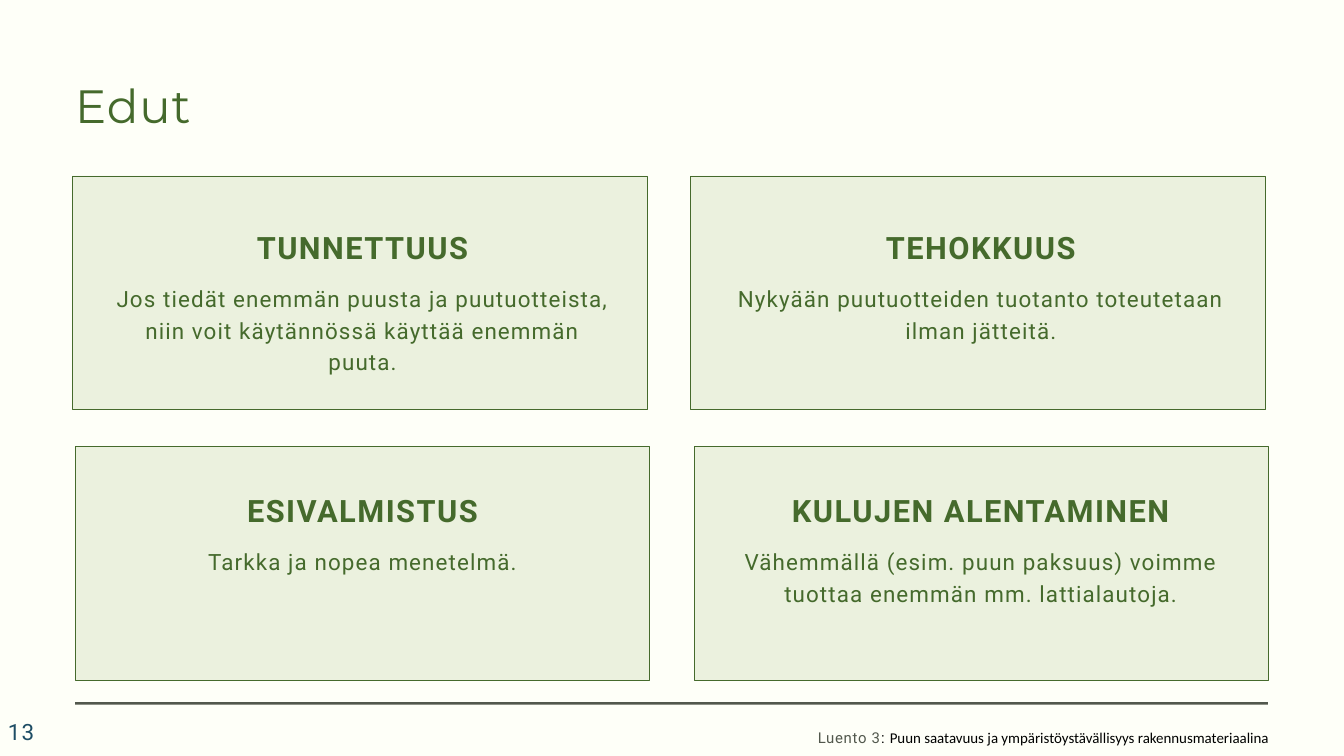
from dataclasses import dataclass

from pptx import Presentation
from pptx.dml.color import RGBColor
from pptx.enum.shapes import MSO_SHAPE
from pptx.enum.text import MSO_ANCHOR, MSO_AUTO_SIZE, PP_ALIGN
from pptx.util import Cm, Pt

RECTANGLE = MSO_SHAPE.RECTANGLE
TOP, MIDDLE = MSO_ANCHOR.TOP, MSO_ANCHOR.MIDDLE
LEFT, CENTER = PP_ALIGN.LEFT, PP_ALIGN.CENTER
NO_AUTOFIT = MSO_AUTO_SIZE.NONE

IVORY = RGBColor(0xFE, 0xFF, 0xF8)
PALE_GREEN = RGBColor(0xEB, 0xF1, 0xDE)
GREEN = RGBColor(0x45, 0x6A, 0x2C)
GREY = RGBColor(0x52, 0x58, 0x4D)
BLUE = RGBColor(0x1E, 0x4D, 0x65)
BLACK = RGBColor(0, 0, 0)

CARD_WIDTH, CARD_HEIGHT = 21.72, 8.84
CARD_TEXT_WIDTH = 18.77
BODY_OFFSET = 2.03  # from the top of the heading to the top of the body


@dataclass
class Style:
    font: str
    size: float
    color: RGBColor
    spacing: float = 0  # between letters, in points
    bold: bool = False


@dataclass
class Card:
    left: float
    top: float
    text_left: float
    text_top: float
    heading: str
    body: str


TITLE = Style("Montserrat", 50, GREEN, 1)
HEADING = Style("Roboto", 33, GREEN, 1.6, True)
BODY = Style("Roboto", 24, GREEN, 1.2)
NUMBER = Style("Roboto", 24, BLUE, 1.2)
LECTURE = Style("Roboto", 16, GREY, 0.8)
COLON = Style("Roboto", 16, BLACK, 0.8)
TOPIC = Style("Calibri", 16, BLACK)

CARDS = [
    Card(2.84, 16.87, 4.32, 18.54, "ESIVALMISTUS", "Tarkka ja nopea menetelmä."),
    Card(2.74, 6.65, 4.32, 8.59, "TUNNETTUUS",
         "Jos tiedät enemmän puusta ja puutuotteista, niin voit "
         "käytännössä käyttää enemmän puuta."),
    Card(26.11, 6.65, 27.69, 8.59, "TEHOKKUUS",
         "Nykyään puutuotteiden tuotanto toteutetaan ilman jätteitä."),
    Card(26.24, 16.87, 27.69, 18.54, "KULUJEN ALENTAMINEN",
         "Vähemmällä (esim. puun paksuus) voimme tuottaa enemmän mm. "
         "lattialautoja."),
]


def add_run(paragraph, text: str, style: Style) -> None:
    run = paragraph.add_run()
    run.text = text
    font_format = {"name": style.font, "size": Pt(style.size), "bold": style.bold}
    for attribute, value in font_format.items():
        setattr(run.font, attribute, value)
    run.font.color.rgb = style.color
    run.font._element.set("spc", str(round(style.spacing * 100)))


def write(shape, runs: list[tuple[str, Style]], line_spacing: float | None = None,
          align: PP_ALIGN = LEFT, anchor: MSO_ANCHOR = TOP, inset: float = 0) -> None:
    frame = shape.text_frame
    margin = Cm(inset)
    frame_format = {
        "word_wrap": True, "auto_size": NO_AUTOFIT, "vertical_anchor": anchor,
        "margin_left": margin, "margin_right": margin,
        "margin_top": margin / 2, "margin_bottom": margin / 2,
    }
    for attribute, value in frame_format.items():
        setattr(frame, attribute, int(value) if attribute.startswith("margin") else value)
    paragraph = frame.paragraphs[0]
    paragraph.alignment = align
    if line_spacing:
        paragraph.line_spacing = Pt(line_spacing)
    for text, style in runs:
        add_run(paragraph, text, style)


def add_text(slide, left: float, top: float, width: float, height: float,
             runs: list[tuple[str, Style]], **layout) -> None:
    box = slide.shapes.add_textbox(Cm(left), Cm(top), Cm(width), Cm(height))
    write(box, runs, **layout)


def add_rectangle(slide, left: float, top: float, width: float, height: float,
                  fill: RGBColor, outline: RGBColor | None = None) -> None:
    rectangle = slide.shapes.add_shape(RECTANGLE, Cm(left), Cm(top), Cm(width), Cm(height))
    rectangle.shadow.inherit = False
    rectangle.fill.solid()
    rectangle.fill.fore_color.rgb = fill
    if outline is None:
        rectangle.line.fill.background()
    else:
        rectangle.line.color.rgb = outline
        rectangle.line.width = Pt(0.75)


def add_card(slide, card: Card) -> None:
    add_rectangle(slide, card.left, card.top, CARD_WIDTH, CARD_HEIGHT, PALE_GREEN, GREEN)
    add_text(slide, card.text_left, card.text_top, CARD_TEXT_WIDTH, 1.4,
             [(card.heading, HEADING)], line_spacing=41.2, align=CENTER)
    add_text(slide, card.text_left, card.text_top + BODY_OFFSET, CARD_TEXT_WIDTH, 2.34,
             [(card.body, BODY)], line_spacing=33.6, align=CENTER)


def main() -> None:
    presentation = Presentation()
    presentation.slide_width, presentation.slide_height = Cm(50.8), Cm(28.58)
    slide = presentation.slides.add_slide(presentation.slide_layouts[5])
    slide.background.fill.solid()
    slide.background.fill.fore_color.rgb = IVORY

    # Title
    title = slide.shapes.title
    place = {"left": 2.84, "top": 2.67, "width": 19.69, "height": 2.26}
    for attribute, value in place.items():
        setattr(title, attribute, Cm(value))
    write(title, [("Edut", TITLE)], line_spacing=66.8)

    # Four advantages
    for card in CARDS:
        add_card(slide, card)

    # Footer: rule, slide number and lecture name
    add_rectangle(slide, 2.84, 26.54, 45.08, 0.1, GREY)
    add_text(slide, 0.05, 27.15, 5.92, 1.02, [("13", NUMBER)], anchor=MIDDLE, inset=0.25)
    add_text(slide, 30.91, 26.92, 19.89, 1.12, [
        ("Luento 3", LECTURE),
        (": ", COLON),
        ("Puun saatavuus ja ympäristöystävällisyys rakennusmateriaalina", TOPIC),
    ], line_spacing=36.5)

    presentation.save("out.pptx")


if __name__ == "__main__":
    main()
